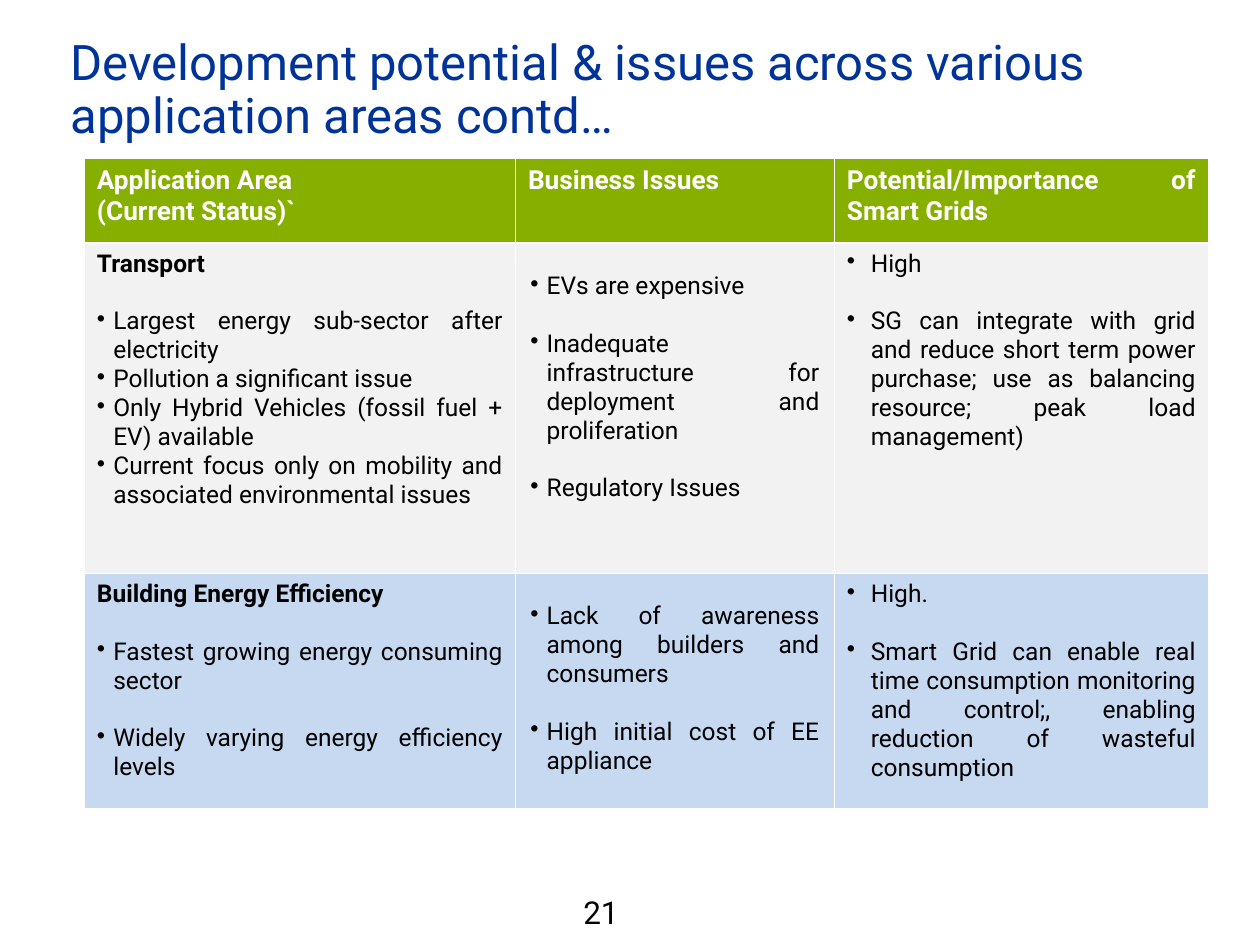
"""Build a slide with a table of issues across application areas."""
from lxml import etree
from pptx import Presentation
from pptx import util as u
from pptx.dml.color import RGBColor
from pptx.enum import text
from pptx.oxml import ns

TITLE = "Development potential & issues across various application areas contd…"
NUMBER = "21"
HEADS = [
    ["Application Area", "(Current Status)`"],
    ["Business Issues"],
    ["Potential/Importance of Smart Grids"],
]
AREAS = [
    {
        "name": "Transport",
        "status": [[
            "Largest energy sub-sector after electricity",
            "Pollution a significant issue",
            "Only Hybrid Vehicles (fossil fuel + EV) available",
            "Current focus only on mobility and associated environmental issues",
        ]],
        "issues": [
            ["EVs are expensive"],
            ["Inadequate infrastructure for deployment and proliferation"],
            ["Regulatory Issues"],
        ],
        "grids": [
            ["High"],
            ["SG can integrate with grid and reduce short term power purchase; "
             "use as balancing resource; peak load management)"],
        ],
    },
    {
        "name": "Building Energy Efficiency",
        "status": [
            ["Fastest growing energy consuming sector"],
            ["Widely varying energy efficiency levels"],
        ],
        "issues": [
            ["Lack of awareness among builders and consumers"],
            ["High initial cost of EE appliance"],
        ],
        "grids": [
            ["High."],
            ["Smart Grid can enable real time consumption monitoring and control;, "
             "enabling reduction of wasteful consumption"],
        ],
    },
]
THEME = {
    "font": "Roboto", "title": "003399", "head": "87AF00", "light": "FFFFFF",
    "dark": "000000", "rows": ["F2F2F2", "C6D9F1"],
    "big": 28, "page": 18, "label": 15, "body": 14, "gap": 16.4,
}
WIDTHS = [8.69, 6.43, 7.54]
HEIGHTS = [1.7, 6.66, 4.75]
HANGS = [0.33, 0.33, 0.48]
JUST = text.PP_ALIGN.JUSTIFY


def write(frame, words, size, color="dark", bold=False, align=None,
          hang=0, gap=0, lead=None):
    """Add one formatted paragraph, filling the first one if it is empty."""
    first = frame.paragraphs[0]
    para = frame.add_paragraph() if first.runs else first
    if hang:
        props = para._p.get_or_add_pPr()
        props.set("marL", str(u.Cm(hang)))
        props.set("indent", str(-u.Cm(hang)))
        etree.SubElement(props, ns.qn("a:buChar")).set("char", "•")
    if gap:
        para.space_before = u.Pt(gap)
    if lead:
        para.line_spacing = lead
    para.alignment = align
    run = para.add_run()
    run.text = words
    run.font.name = THEME["font"]
    run.font.size = u.Pt(THEME[size])
    run.font.bold = bold
    run.font.color.rgb = RGBColor.from_string(THEME[color])


def place(slide, box):
    """Add a wrapping text box and return its frame."""
    frame = slide.shapes.add_textbox(*map(u.Cm, box)).text_frame
    frame.word_wrap = True
    return frame


def paint(cell, color):
    """Fill a cell with a solid colour and return its text frame."""
    cell.fill.solid()
    cell.fill.fore_color.rgb = RGBColor.from_string(color)
    return cell.text_frame


def list_out(frame, groups, hang):
    """Write bullet groups with a one-line gap between them."""
    for group in groups:
        for n, words in enumerate(group):
            gap = THEME["gap"] if n == 0 and frame.paragraphs[0].runs else 0
            write(frame, words, "body", align=JUST, hang=hang, gap=gap)


def main():
    """Lay out the slide and save it."""
    deck = Presentation()
    deck.slide_width, deck.slide_height = u.Cm(25.4), u.Cm(19.05)
    slide = deck.slides.add_slide(deck.slide_layouts[6])

    write(place(slide, (11.51, 17.88, 3.81, 0.84)), NUMBER, "page")

    table = slide.shapes.add_table(
        len(HEIGHTS), len(WIDTHS), u.Cm(1.7), u.Cm(3.2),
        u.Cm(sum(WIDTHS)), u.Cm(sum(HEIGHTS))).table
    for col, width in zip(table.columns, WIDTHS):
        col.width = u.Cm(width)
    for row, height in zip(table.rows, HEIGHTS):
        row.height = u.Cm(height)

    for n, lines in enumerate(HEADS):
        frame = paint(table.cell(0, n), THEME["head"])
        for words in lines:
            write(frame, words, "label", "light", bold=True, align=JUST)

    for r, (area, color) in enumerate(zip(AREAS, THEME["rows"]), 1):
        for c, key in enumerate(("status", "issues", "grids")):
            cell = table.cell(r, c)
            frame = paint(cell, color)
            if key == "status":
                write(frame, area["name"], "body", bold=True, align=JUST)
            elif key == "issues":
                cell.margin_left = cell.margin_right = u.Cm(0.3)
                cell.margin_top, cell.margin_bottom = u.Pt(THEME["gap"]), 0
            list_out(frame, area[key], HANGS[c])

    frame = place(slide, (1.07, 0.64, 23.5, 2.08))
    frame.margin_left = frame.margin_right = u.Cm(0.36)
    write(frame, TITLE, "big", "title", lead=0.9)
    deck.save("out.pptx")


if __name__ == "__main__":
    main()
